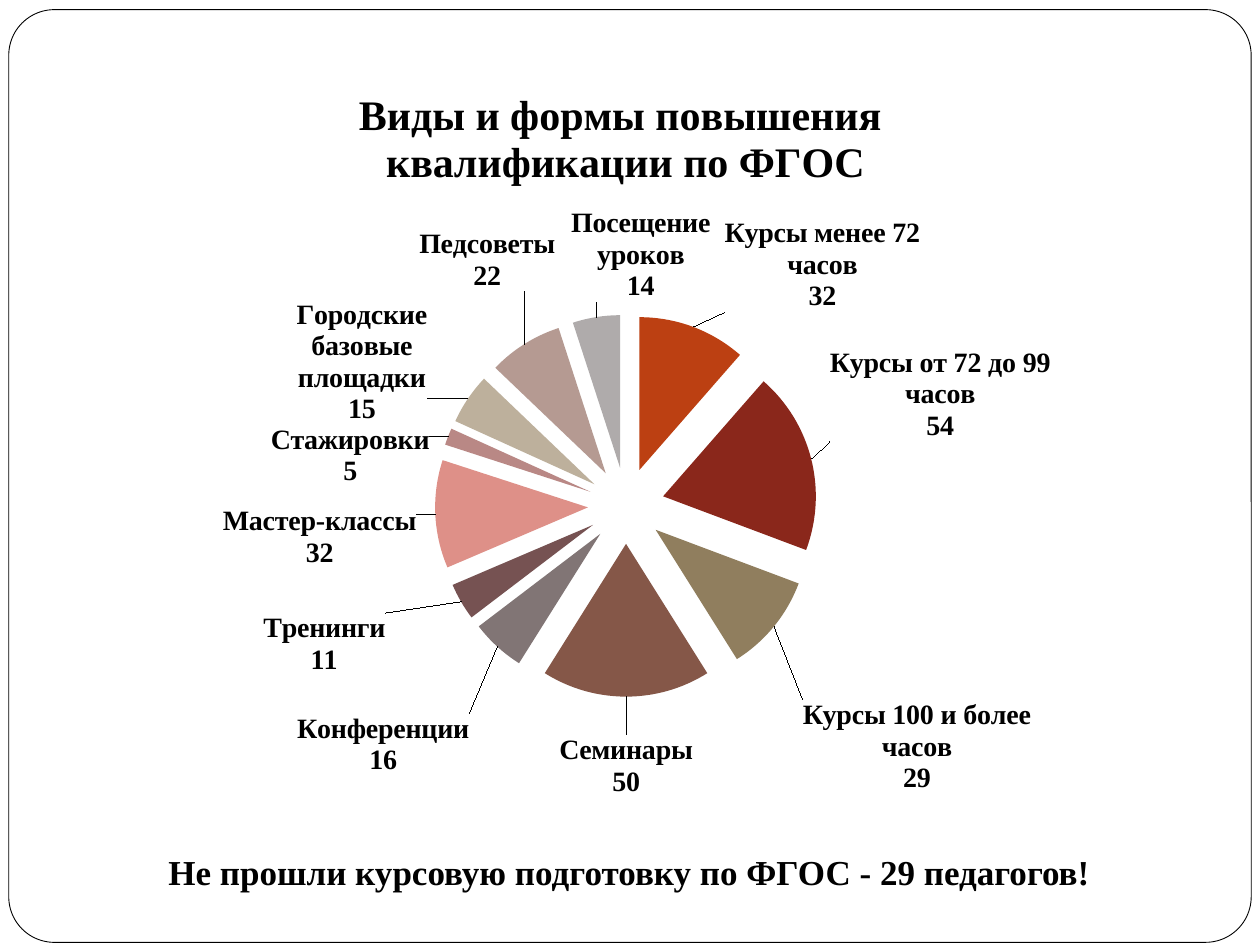
from lxml.etree import SubElement
from pptx import Presentation
from pptx.chart.data import CategoryChartData
from pptx.dml.color import RGBColor
from pptx.enum.chart import XL_CHART_TYPE, XL_LABEL_POSITION
from pptx.enum.shapes import MSO_SHAPE
from pptx.enum.text import MSO_AUTO_SIZE, PP_ALIGN
from pptx.oxml import parse_xml
from pptx.oxml.ns import nsdecls, qn
from pptx.util import Pt

FONT = "Times New Roman"
COLORS = {"paper": "FFFFFF", "ink": "000000"}

# category, value, slice colour, label shift as fractions of the chart
SLICES = [
    ("Курсы менее 72 часов", 32, "BC4012", (0.025, -0.01)),
    ("Курсы от 72 до 99 часов", 54, "8A271B", (0.01, -0.02)),
    ("Курсы 100 и более часов", 29, "907E5E", (0.02, 0.09)),
    ("Семинары", 50, "855748", (0, 0.04)),
    ("Конференции", 16, "817575", (-0.02, 0.08)),
    ("Тренинги", 11, "765252", (-0.06, 0.01)),
    ("Мастер-классы", 32, "DE9088", (-0.01, 0.03)),
    ("Стажировки", 5, "B98885", (-0.01, 0.07)),
    ("Городские базовые площадки", 15, "BDB09C", (-0.03, 0.04)),
    ("Педсоветы", 22, "B59A92", (0.03, -0.06)),
    ("Посещение уроков", 14, "AFABAB", (0.1, -0.01)),
]


def rgb(name):
    return RGBColor.from_string(COLORS[name])


def style_font(font, size, bold=True):
    font.name = FONT
    font.size = Pt(size)
    font.bold = bold
    font.color.rgb = rgb("ink")


def set_layout(parent, position, **settings):
    """Give a chart part a manual layout as its child at the given position."""
    for old in parent.findall(qn("c:layout")):
        parent.remove(old)
    layout = parse_xml(f"<c:layout {nsdecls('c')}/>")
    manual = SubElement(layout, qn("c:manualLayout"))
    for name, value in settings.items():
        SubElement(manual, qn(f"c:{name}")).set("val", str(value))
    parent.insert(position, layout)


def add_frame(slide):
    frame = slide.shapes.add_shape(
        MSO_SHAPE.ROUNDED_RECTANGLE, Pt(5), Pt(5.5), Pt(710), Pt(533))
    frame.adjustments[0] = 0.049
    frame.shadow.inherit = False
    frame.fill.solid()
    frame.fill.fore_color.rgb = rgb("paper")
    frame.line.color.rgb = rgb("ink")
    frame.line.width = Pt(0.5)


def add_title(chart, lines):
    title = chart.chart_title
    text_frame = title.text_frame
    for index, line in enumerate(lines):
        paragraph = text_frame.add_paragraph() if index else text_frame.paragraphs[0]
        run = paragraph.add_run()
        run.text = line
        style_font(run.font, 24)
    title.include_in_layout = False
    set_layout(title._element, 1, xMode="edge", yMode="edge", x=0.27, y=0.04)


def add_labels(series):
    labels = series.data_labels
    style_font(labels.font, 16)
    labels.show_value = True
    labels.show_category_name = True
    labels.position = XL_LABEL_POSITION.OUTSIDE_END
    for index, (*_, shift) in enumerate(SLICES):
        label = series.points[index].data_label
        style_font(label.font, 16)
        label.position = XL_LABEL_POSITION.OUTSIDE_END
    label_list = labels._element
    for element, (*_, (x, y)) in zip(label_list.findall(qn("c:dLbl")), SLICES):
        set_layout(element, 1, x=x, y=y)
        element.find(qn("c:showCatName")).set("val", "1")
        SubElement(element, qn("c:separator")).text = "\n"
    for old in label_list.findall(qn("c:showLeaderLines")):
        label_list.remove(old)
    SubElement(label_list, qn("c:separator")).text = "\n"
    SubElement(label_list, qn("c:showLeaderLines")).set("val", "1")


def add_pie(slide):
    data = CategoryChartData()
    data.categories = [name for name, *_ in SLICES]
    data.add_series("Series 1", [value for _, value, *_ in SLICES])
    chart = slide.shapes.add_chart(
        XL_CHART_TYPE.PIE, Pt(25), Pt(31.5), Pt(659), Pt(436.5), data).chart
    style_font(chart.font, 10, bold=False)
    chart.has_legend = False
    add_title(chart, ["Виды и формы повышения ", "квалификации по ФГОС"])
    plot = chart.plots[0]
    plot.vary_by_categories = True
    set_layout(chart._chartSpace.chart.plotArea, 0, layoutTarget="inner",
               xMode="edge", yMode="edge", x=0.19, y=0.34, w=0.63, h=0.5)
    series = plot.series[0]
    series._element.find(qn("c:tx")).addnext(
        parse_xml(f'<c:explosion {nsdecls("c")} val="25"/>'))
    for index, (_, _, color, _) in enumerate(SLICES):
        point_format = series.points[index].format
        point_format.fill.solid()
        point_format.fill.fore_color.rgb = RGBColor.from_string(color)
        point_format.line.fill.background()
    add_labels(series)


def add_note(slide, text):
    box = slide.shapes.add_textbox(Pt(25), Pt(482.5), Pt(669), Pt(31.5))
    text_frame = box.text_frame
    text_frame.word_wrap = True
    text_frame.auto_size = MSO_AUTO_SIZE.SHAPE_TO_FIT_TEXT
    paragraph = text_frame.paragraphs[0]
    paragraph.alignment = PP_ALIGN.CENTER
    run = paragraph.add_run()
    run.text = text
    style_font(run.font, 20)


def main():
    presentation = Presentation()
    presentation.slide_width = Pt(720)
    presentation.slide_height = Pt(540)
    slide = presentation.slides.add_slide(presentation.slide_layouts[6])
    add_frame(slide)
    add_pie(slide)
    add_note(slide, "Не прошли курсовую подготовку по ФГОС - 29 педагогов!")
    presentation.save("out.pptx")


if __name__ == "__main__":
    main()
